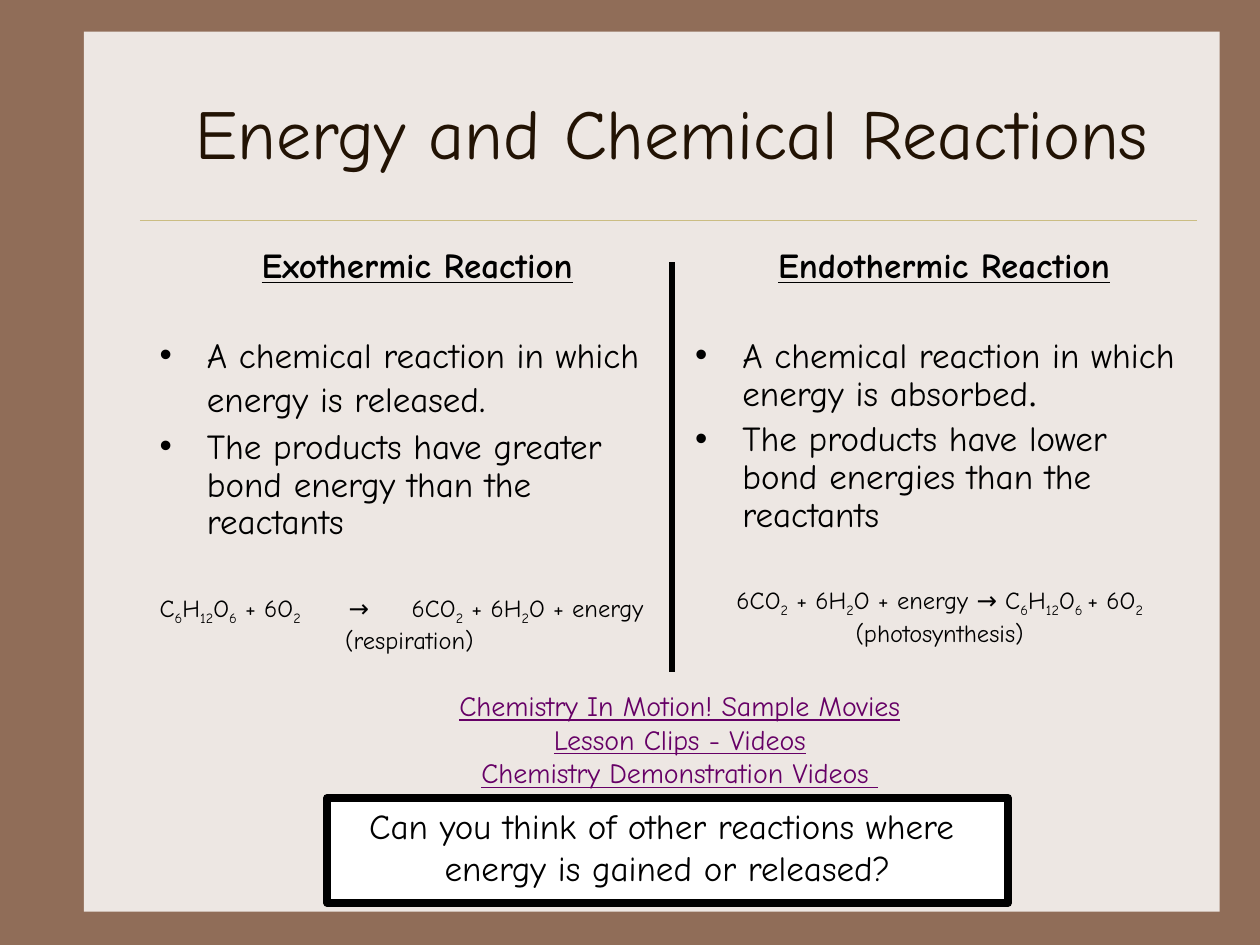
from lxml.etree import SubElement
from pptx import Presentation
from pptx.dml.color import RGBColor
from pptx.enum.shapes import MSO_CONNECTOR as Connector, MSO_SHAPE as Shape
from pptx.enum.text import MSO_ANCHOR as Anchor, MSO_AUTO_SIZE as AutoSize, PP_ALIGN as Align
from pptx.oxml.ns import qn
from pptx.util import Pt

COLORS = {
    "background": "906D58",
    "panel": "EDE7E3",
    "rule": "CBBD83",
    "title": "221304",
    "text": "000000",
    "link": "660066",
    "box": "FFFFFF",
}
FONT = "Comic Neue"


def color(name):
    return RGBColor.from_string(COLORS[name])


def place(shape, left, top, width, height):
    shape.left, shape.top = Pt(left), Pt(top)
    shape.width, shape.height = Pt(width), Pt(height)


def format_font(font, size, name="text", bold=None, underline=None):
    font.name, font.size = FONT, Pt(size)
    font.bold, font.underline = bold, underline
    font.color.rgb = color(name)


def add_rectangle(slide, left, top, width, height, fill):
    shape = slide.shapes.add_shape(
        Shape.RECTANGLE, Pt(left), Pt(top), Pt(width), Pt(height))
    shape.shadow.inherit = False
    shape.fill.solid()
    shape.fill.fore_color.rgb = color(fill)
    shape.line.fill.background()
    return shape


def add_line(slide, start, end, name, width):
    line = slide.shapes.add_connector(
        Connector.STRAIGHT, *(Pt(value) for value in (*start, *end)))
    line.line.color.rgb = color(name)
    line.line.width = Pt(width)
    SubElement(line._element.spPr, qn("a:effectLst"))
    return line


def send_to_back(slide, *shapes):
    tree = slide.shapes._spTree
    for position, shape in enumerate(shapes, 2):
        tree.insert(position, shape._element)


def write_lines(frame, lines, size, name="text", underline=None):
    for index, line in enumerate(lines):
        paragraph = frame.paragraphs[0] if index == 0 else frame.add_paragraph()
        paragraph.alignment = Align.CENTER
        paragraph.text = line
        format_font(paragraph.font, size, name, underline=underline)


def format_paragraph(paragraph, size, before=0, align=Align.LEFT, margin=0,
                     indent=0, bullet=None, tabs=(), **style):
    properties = paragraph._p.get_or_add_pPr()
    properties.set("marL", str(Pt(margin)))
    properties.set("indent", str(Pt(indent)))
    if bullet:
        SubElement(properties, qn("a:buChar"), char=bullet)
    else:
        SubElement(properties, qn("a:buNone"))
    if tabs:
        tab_list = SubElement(properties, qn("a:tabLst"))
        for position in tabs:
            SubElement(tab_list, qn("a:tab"), pos=str(Pt(position)), algn="l")
    paragraph.alignment = align
    paragraph.line_spacing = 0.9
    paragraph.space_before = Pt(before)
    format_font(paragraph.font, size, **style)


def add_formula(paragraph, formula):
    for index, piece in enumerate(formula.split("_")):
        run = paragraph.add_run()
        run.text = piece
        if index % 2:
            run._r.get_or_add_rPr().set("baseline", "-25000")


def fill_column(body, area, heading, shift, points, stop, formula, align, tabs, process):
    place(body, *area)
    frame = body.text_frame
    frame.auto_size = AutoSize.NONE

    paragraph = frame.paragraphs[0]
    paragraph.text = heading
    format_paragraph(paragraph, 20, align=Align.CENTER, margin=shift,
                     bold=True, underline=True)

    for index, point in enumerate(points):
        paragraph = frame.add_paragraph()
        paragraph.text = point
        format_paragraph(paragraph, 20, before=4.5 if index else 30,
                         margin=27, indent=-27, bullet="•")
        if index == 0:
            period = paragraph.add_run()
            period.text = "."
            period.font.name, period.font.size = stop

    paragraph = frame.add_paragraph()
    add_formula(paragraph, formula)
    format_paragraph(paragraph, 14, before=29, align=align, tabs=tabs)

    paragraph = frame.add_paragraph()
    paragraph.text = process
    format_paragraph(paragraph, 14, before=3, align=Align.CENTER)


def add_links(slide):
    box = slide.shapes.add_textbox(Pt(90), Pt(390), Pt(597), Pt(65))
    box.text_frame.word_wrap = True
    write_lines(box.text_frame, [
        "Chemistry In Motion! Sample Movies",
        "Lesson Clips - Videos",
        "Chemistry Demonstration Videos ",
    ], 16, "link", underline=True)


def add_question(slide):
    box = add_rectangle(slide, 187, 456, 389, 60, "box")
    box.line.color.rgb = color("text")
    box.line.width = Pt(4.5)
    box.text_frame.word_wrap = False
    box.text_frame.vertical_anchor = Anchor.TOP
    write_lines(box.text_frame, [
        "Can you think of other reactions where ",
        "energy is gained or released?",
    ], 20)


def main():
    presentation = Presentation()
    presentation.slide_width, presentation.slide_height = Pt(720), Pt(540)
    slide = presentation.slides.add_slide(presentation.slide_layouts[3])
    slide.background.fill.solid()
    slide.background.fill.fore_color.rgb = color("background")

    panel = add_rectangle(slide, 48, 18, 649, 503, "panel")
    rule = add_line(slide, (80, 126), (684, 126), "rule", 0.25)
    send_to_back(slide, panel, rule)

    title, left, right = slide.placeholders
    place(title, 84, 30, 600, 90)
    title.text_frame.vertical_anchor = Anchor.MIDDLE
    write_lines(title.text_frame, ["Energy and Chemical Reactions"], 40, "title")

    fill_column(
        left, (84, 138, 300, 294), "Exothermic Reaction", 9,
        ["A chemical reaction in which energy is released",
         "The products have greater bond energy than the reactants"],
        (FONT, Pt(24)),
        "C_6_H_12_O_6_ + 6O_2_\t→\t6CO_2_ + 6H_2_O + energy",
        Align.LEFT, (95, 116), "(respiration)")
    fill_column(
        right, (390, 138, 294, 246), "Endothermic Reaction", 5,
        ["A chemical reaction in which energy is absorbed",
         "The products have lower bond energies than the reactants"],
        ("Times New Roman", Pt(20)),
        "6CO_2_ + 6H_2_O + energy → C_6_H_12_O_6 _+ 6O_2",
        Align.CENTER, (), "(photosynthesis)")

    add_line(slide, (384, 150), (384, 384), "text", 3)
    add_links(slide)
    add_question(slide)
    presentation.save("out.pptx")


if __name__ == "__main__":
    main()
